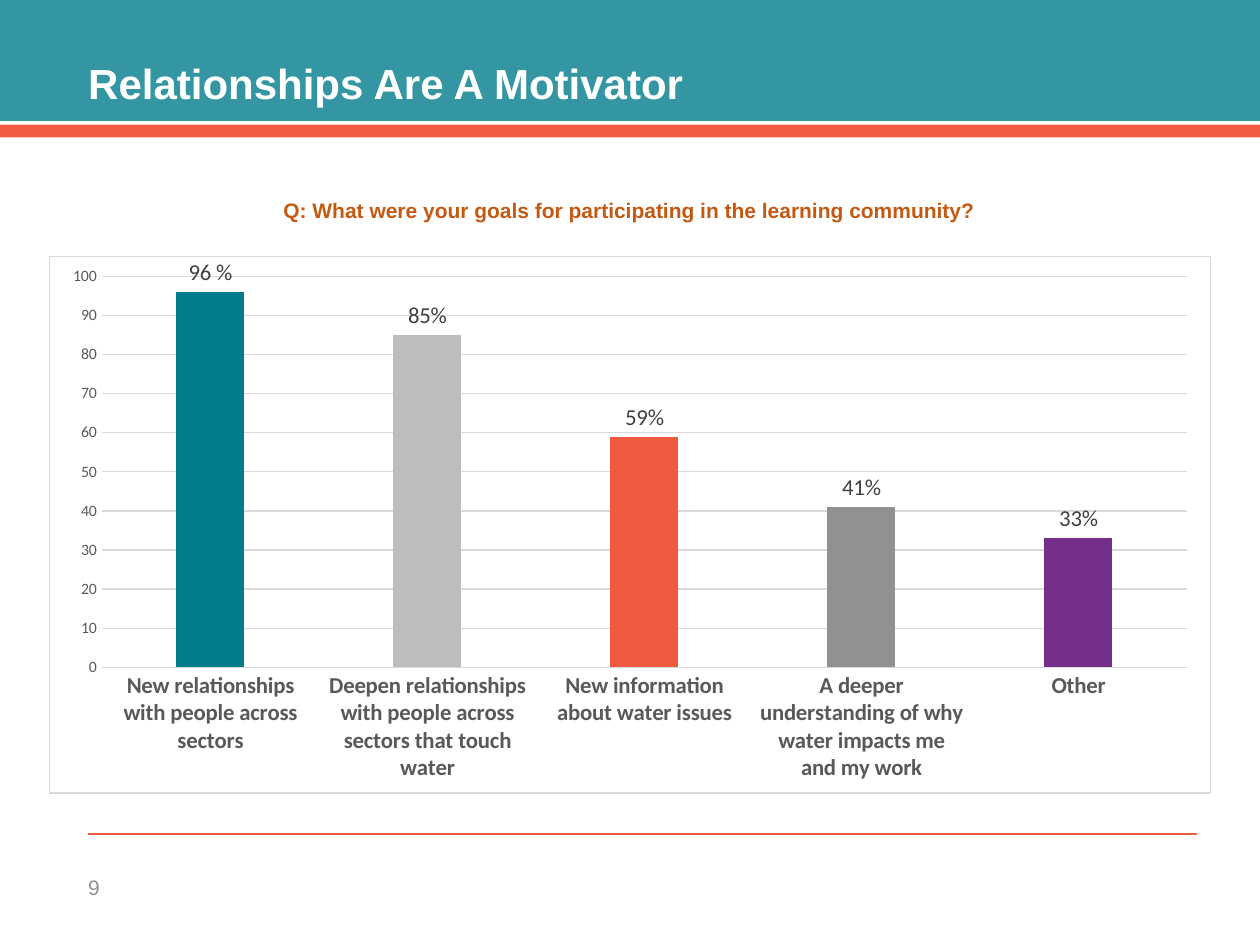
from lxml import etree
from pptx import Presentation
from pptx.chart.data import CategoryChartData
from pptx.dml.color import RGBColor
from pptx.enum.chart import XL_CHART_TYPE, XL_LABEL_POSITION, XL_TICK_MARK
from pptx.enum.shapes import MSO_CONNECTOR, MSO_SHAPE
from pptx.enum.text import MSO_ANCHOR, PP_ALIGN
from pptx.oxml import parse_xml
from pptx.oxml.ns import nsdecls, qn
from pptx.util import Inches, Pt

TEAL = RGBColor(0x00, 0x7C, 0x8B)
ORANGE = RGBColor(0xF1, 0x5B, 0x40)
CORAL = RGBColor(0xF0, 0x5B, 0x40)
SILVER = RGBColor(0xBD, 0xBD, 0xBD)
GRAY = RGBColor(0x91, 0x91, 0x91)
PURPLE = RGBColor(0x73, 0x2F, 0x8A)
RUST = RGBColor(0xC4, 0x59, 0x11)
WHITE = RGBColor(0xFF, 0xFF, 0xFF)
RULE = RGBColor(0xD9, 0xD9, 0xD9)
AXIS_TEXT = RGBColor(0x59, 0x59, 0x59)
LABEL_TEXT = RGBColor(0x40, 0x40, 0x40)


def set_font(font, color, **values):
    for name, value in values.items():
        setattr(font, name, value)
    font.color.rgb = color


def add_rect(s, x, y, w, h, color):
    sp = s.shapes.add_shape(MSO_SHAPE.RECTANGLE, Inches(x), Inches(y), Inches(w), Inches(h))
    sp.shadow.inherit = False
    sp.fill.solid()
    sp.fill.fore_color.rgb = color
    sp.line.fill.background()
    return sp


prs = Presentation()
prs.slide_width, prs.slide_height = Inches(10), Inches(7.5)
s = prs.slides.add_slide(prs.slide_layouts[5])

band = add_rect(s, 0, 0, 10, 0.96, TEAL)
color = band.fill._xPr.find(qn("a:solidFill"))[0]
etree.SubElement(color, qn("a:alpha"), val="80000")
add_rect(s, 0, 0.99, 10, 0.1, ORANGE)

rule = s.shapes.add_connector(MSO_CONNECTOR.STRAIGHT, Inches(0.7), Inches(6.62), Inches(9.5), Inches(6.62))
rule.line.color.rgb = ORANGE
rule.line.width = Pt(1)
etree.SubElement(rule.element.spPr, qn("a:effectLst"))

title = s.shapes.title
title.left, title.top, title.width, title.height = Inches(0.7), Inches(0.43), Inches(8.8), Inches(0.48)
band.element.getparent().append(title.element)
number = s.shapes.add_textbox(Inches(0.7), Inches(6.84), Inches(0.5), Inches(0.4))
for sp, text, anchor, top, size, bold, color in [
    (title, "Relationships Are A Motivator", MSO_ANCHOR.TOP, 0.03, 24, True, WHITE),
    (number, "9", MSO_ANCHOR.MIDDLE, 0, 12, False, GRAY),
]:
    tf = sp.text_frame
    tf.word_wrap = True
    tf.vertical_anchor = anchor
    tf.margin_left = tf.margin_right = tf.margin_bottom = 0
    tf.margin_top = Inches(top)
    p = tf.paragraphs[0]
    p.alignment = PP_ALIGN.LEFT
    r = p.add_run()
    r.text = text
    set_font(r.font, color, name="Arial", size=Pt(size), bold=bold)

goals = [
    ("New relationships with people across sectors", 96, "96 %", TEAL),
    ("Deepen relationships with people across sectors that touch water", 85, "85%", SILVER),
    ("New information about water issues", 59, "59%", CORAL),
    ("A deeper understanding of why water impacts me and my work", 41, "41%", GRAY),
    ("Other", 33, "33%", PURPLE),
]
data = CategoryChartData()
data.categories = [goal[0] for goal in goals]
data.add_series("Series 1", [goal[1] for goal in goals])
chart = s.shapes.add_chart(
    XL_CHART_TYPE.COLUMN_CLUSTERED, Inches(0.39), Inches(2.03), Inches(9.22), Inches(4.27), data
).chart
chart.has_legend = False
chart.has_title = False
set_font(chart.font, RGBColor(0, 0, 0), name="Calibri", size=Pt(10))
frame = parse_xml(
    f'<c:spPr {nsdecls("c", "a")}><a:solidFill><a:srgbClr val="{WHITE}"/></a:solidFill>'
    f'<a:ln w="9525"><a:solidFill><a:srgbClr val="{RULE}"/></a:solidFill></a:ln></c:spPr>'
)
chart.element.find(qn("c:txPr")).addprevious(frame)

cat, val = chart.category_axis, chart.value_axis
for axis, size, bold in [(cat, 13, True), (val, 9, False)]:
    axis.major_tick_mark = axis.minor_tick_mark = XL_TICK_MARK.NONE
    set_font(axis.tick_labels.font, AXIS_TEXT, name="Calibri", size=Pt(size), bold=bold)
val.minimum_scale, val.maximum_scale, val.major_unit = 0, 100, 10
val.format.line.fill.background()
val.has_major_gridlines = True
for line in (cat.format.line, val.major_gridlines.format.line):
    line.color.rgb = RULE
    line.width = Pt(0.75)

plot = chart.plots[0]
plot.vary_by_categories = False
plot.gap_width, plot.overlap = 219, -27
series = plot.series[0]
series.format.fill.solid()
series.format.fill.fore_color.rgb = TEAL
for i, (_, _, text, color) in enumerate(goals):
    point = series.points[i]
    point.format.fill.solid()
    point.format.fill.fore_color.rgb = color
    label = point.data_label
    r = label.text_frame.paragraphs[0].add_run()
    r.text = text
    set_font(r.font, LABEL_TEXT, name="Calibri", size=Pt(13), bold=False)
    label.position = XL_LABEL_POSITION.OUTSIDE_END

question = add_rect(s, 2.03, 1.52, 5.93, 0.51, WHITE)
tf = question.text_frame
tf.word_wrap = True
tf.vertical_anchor = MSO_ANCHOR.TOP
p = tf.paragraphs[0]
p.alignment = PP_ALIGN.CENTER
r = p.add_run()
r.text = "Q: What were your goals for participating in the learning community?"
set_font(r.font, RUST, name="Arial", size=Pt(12), bold=True)

prs.save("out.pptx")
